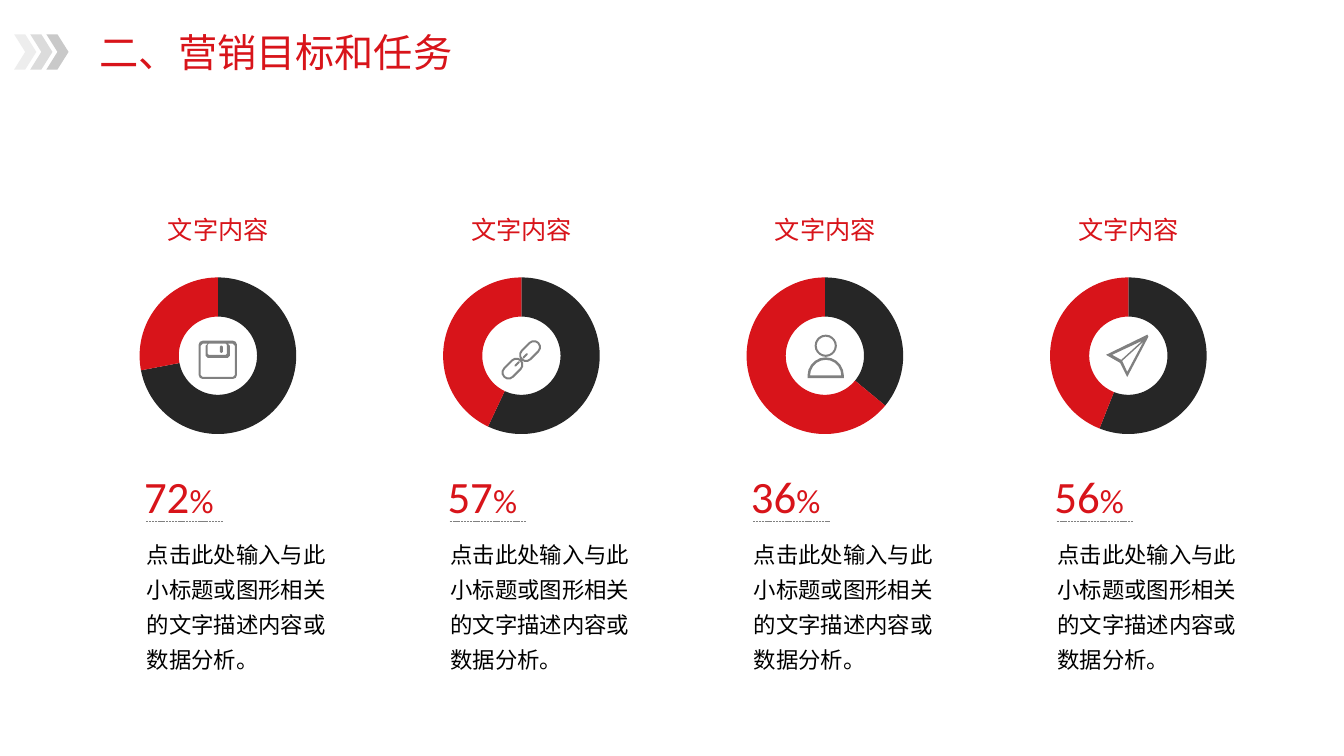
import math
from lxml import etree
from pptx import Presentation
from pptx import util as u
from pptx.chart import data
from pptx.dml import color
from pptx.enum import chart as kinds
from pptx.enum import dml, shapes, text
from pptx.oxml import ns

HEX = {"red": "D8141A", "dark": "262626", "gray": "808080", "black": "000000"}
RGB = {name: color.RGBColor.from_string(code) for name, code in HEX.items()}
HEAD, BODY = "Noto Sans CJK JP", "Noto Sans CJK SC"
NOTE = "点击此处输入与此小标题或图形相关的文字描述内容或数据分析。"


def write(box, words, size, face, tint, wrap=True):
    """Fill a box with one paragraph and style it."""
    frame = box.text_frame
    frame.word_wrap = wrap
    frame.auto_size = text.MSO_AUTO_SIZE.SHAPE_TO_FIT_TEXT
    frame.vertical_anchor = text.MSO_ANCHOR.TOP
    para = frame.paragraphs[0]
    para.add_run().text = words
    font = para.font
    font.size = u.Pt(size)
    font.color.rgb = RGB[tint]
    font.name = face
    etree.SubElement(font._element, ns.qn("a:ea"), typeface=face)
    return para


def round_box(x, y, w, h, r, turn=0):
    """Points of a rounded box around (x, y), turned by some degrees."""
    cos, sin = math.cos(math.radians(turn)), math.sin(math.radians(turn))
    steps = 1 + int(r * 40)
    points = []
    for i, (sx, sy) in enumerate([(1, 1), (-1, 1), (-1, -1), (1, -1)]):
        for k in range(steps + 1):
            a = math.radians(90 * (i + k / steps))
            dx = sx * (w / 2 - r) + r * math.cos(a)
            dy = sy * (h / 2 - r) + r * math.sin(a)
            points.append((x + dx * cos - dy * sin, y + dx * sin + dy * cos))
    return points


deck = Presentation()
deck.slide_width, deck.slide_height = u.Inches(13.33), u.Inches(7.5)
slide = deck.slides.add_slide(deck.slide_layouts[5])
items = slide.shapes

# Header chevrons
for i, tone in enumerate(["EDEDED", "DBDBDB", "C9C9C9"]):
    mark = items.add_shape(shapes.MSO_SHAPE.CHEVRON, u.Inches(0.14 + 0.16 * i),
                           u.Inches(0.34), u.Inches(0.22), u.Inches(0.35))
    mark.shadow.inherit = False
    mark.fill.solid()
    mark.fill.fore_color.rgb = color.RGBColor.from_string(tone)
    mark.line.fill.background()

# Title
title = items.title
title.left, title.top = u.Inches(0.89), u.Inches(0.23)
title.width, title.height = u.Inches(3.74), u.Inches(0.57)
para = write(title, "二、营销目标和任务", 28, HEAD, "red", wrap=False)
para.alignment = text.PP_ALIGN.LEFT
para.space_before = u.Pt(0)

# Four columns: label, ring chart, share, rule, note
for i, share in enumerate([72, 57, 36, 56]):
    x = 0.78 + 3.01 * i

    label = items.add_textbox(u.Inches(x + 0.64), u.Inches(2.08), u.Inches(1.49), u.Inches(0.4))
    para = write(label, "文字内容", 18, HEAD, "red")
    para.alignment = text.PP_ALIGN.CENTER

    table = data.CategoryChartData()
    table.categories = ["1", "2"]
    table.add_series("Series 1", [share, 100 - share])
    ring = items.add_chart(kinds.XL_CHART_TYPE.DOUGHNUT, u.Inches(x), u.Inches(2.61),
                           u.Inches(2.75), u.Inches(1.84), table).chart
    ring.has_legend = ring.has_title = False
    ring.font.size, ring.font.name = u.Pt(10), "Calibri"
    ring.font.color.rgb = RGB["black"]
    plot = ring.plots[0]
    plot.vary_by_categories = True
    for j, tint in enumerate(["dark", "red"]):
        fill = plot.series[0].points[j].format.fill
        fill.solid()
        fill.fore_color.rgb = RGB[tint]
    next(ring.element.iter(ns.qn("c:holeSize"))).set("val", "90")

    # Ring placement inside its frame
    area = next(ring.element.iter(ns.qn("c:plotArea")))
    for old in area.findall(ns.qn("c:layout")):
        area.remove(old)
    place = etree.Element(ns.qn("c:layout"))
    area.insert(0, place)
    manual = etree.SubElement(place, ns.qn("c:manualLayout"))
    for key, val in [("layoutTarget", "inner"), ("xMode", "edge"), ("yMode", "edge"),
                     ("x", "0.22"), ("y", "0.075"), ("w", "0.565"), ("h", "0.85")]:
        etree.SubElement(manual, ns.qn("c:" + key), val=val)

    number = items.add_textbox(u.Inches(x + 0.55), u.Inches(4.6), u.Inches(1.18), u.Inches(0.64))
    sign = write(number, str(share), 32, "Calibri", "red").add_run()
    sign.text = "%"
    sign.font.size = u.Pt(24)

    rule = items.add_connector(shapes.MSO_CONNECTOR.STRAIGHT, u.Inches(x + 0.67),
                               u.Inches(5.17), u.Inches(x + 1.43), u.Inches(5.17))
    rule.line.color.rgb = RGB["gray"]
    rule.line.width = u.Pt(0.5)
    rule.line.dash_style = dml.MSO_LINE.SQUARE_DOT
    etree.SubElement(rule._element.spPr, ns.qn("a:effectLst"))

    note = items.add_textbox(u.Inches(x + 0.58), u.Inches(5.24), u.Inches(2.06), u.Inches(1.5))
    write(note, NOTE, 16, BODY, "black").line_spacing = 1.3

# Icon outlines: every nested outline cuts a hole in the one around it
disk = [round_box(2.16, 3.57, 0.38, 0.38, 0.04),
        round_box(2.16, 3.575, 0.34, 0.33, 0.02),
        round_box(2.16, 3.48, 0.24, 0.14, 0.02),
        round_box(2.155, 3.465, 0.19, 0.11, 0.01),
        round_box(2.195, 3.465, 0.03, 0.07, 0.01)]

link = []
for side in (1, -1):
    x, y = 5.17 + 0.087 * side, 3.57 - 0.087 * side
    link += [round_box(x, y, 0.25, 0.14, 0.07, -45),
             round_box(x, y, 0.21, 0.1, 0.05, -45),
             round_box(5.17 + 0.04 * side, 3.57 - 0.04 * side, 0.07, 0.02, 0.01, -45)]

head = [round_box(8.19, 3.43, 2 * r, 2 * r, r) for r in (0.11, 0.09)]
torso = []
for r, base in [(0.18, 3.75), (0.155, 3.725)]:
    arc = [math.radians(180 + 18 * k) for k in range(11)]
    torso.append([(8.19 - r, base)]
                 + [(8.19 + r * math.cos(a), 3.725 + r * math.sin(a)) for a in arc]
                 + [(8.19 + r, base)])

plane = [[(11.38, 3.32), (10.97, 3.52), (11.11, 3.6), (11.18, 3.74), (11.39, 3.34)],
         [(11.03, 3.52), (11.33, 3.38), (11.12, 3.57)],
         [(11.18, 3.69), (11.13, 3.58), (11.34, 3.39)]]

# Icons
for icon in (disk, link, head, torso, plane):
    loops = [[(u.Inches(x), u.Inches(y)) for x, y in loop] for loop in icon]
    pen = items.build_freeform(*loops[0][0])
    for k, loop in enumerate(loops):
        if k:
            pen.move_to(*loop[0])
        pen.add_line_segments(loop[1:], close=True)
    form = pen.convert_to_shape()
    form.shadow.inherit = False
    form.fill.solid()
    form.fill.fore_color.rgb = RGB["gray"]
    form.line.fill.background()

deck.save("out.pptx")
